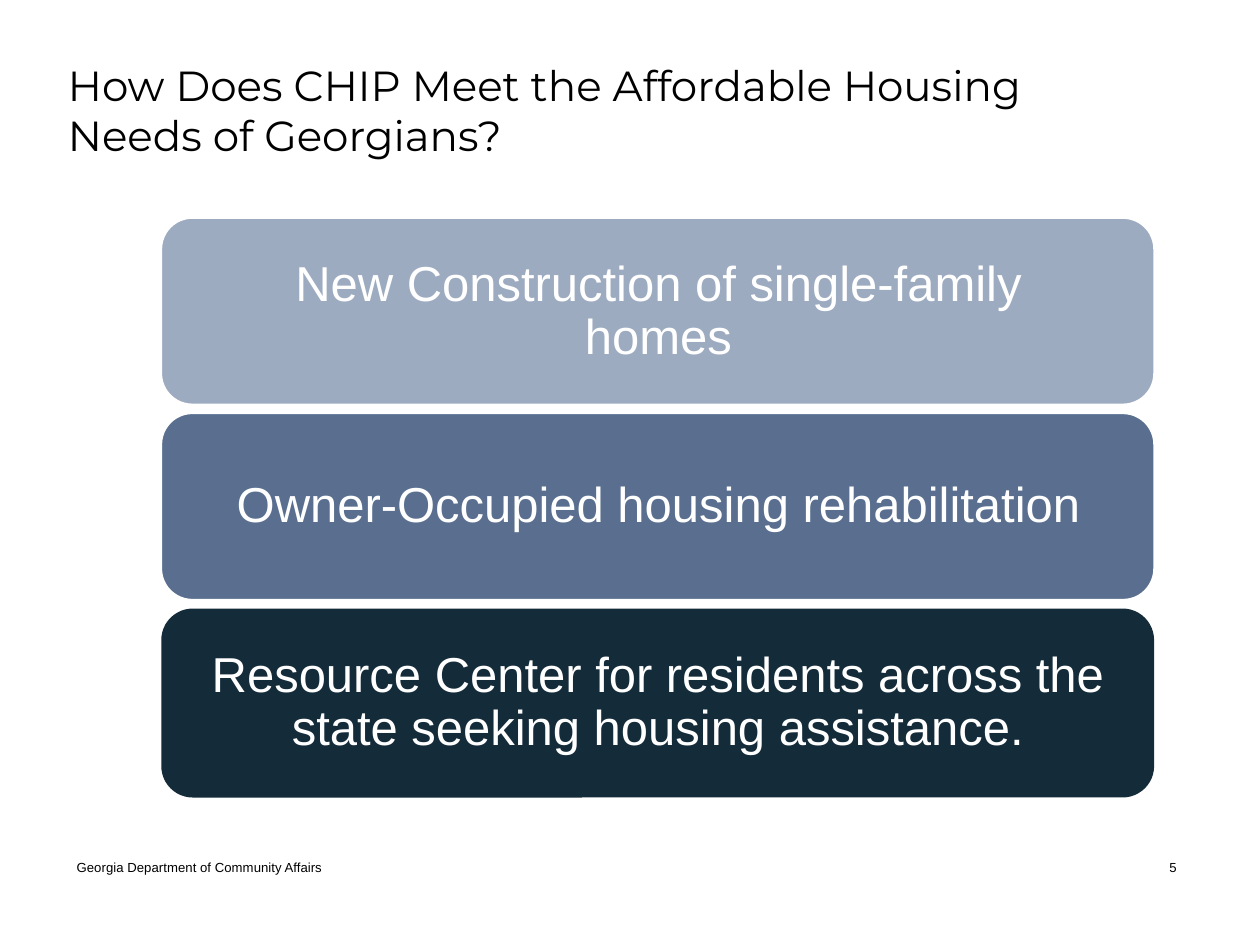
from dataclasses import dataclass

from pptx import Presentation
from pptx.dml.color import RGBColor
from pptx.enum.shapes import MSO_SHAPE
from pptx.enum.text import MSO_ANCHOR, PP_ALIGN
from pptx.util import Inches, Pt

ROUNDED = MSO_SHAPE.ROUNDED_RECTANGLE
MIDDLE, TOP = MSO_ANCHOR.MIDDLE, MSO_ANCHOR.TOP
LEFT, CENTER = PP_ALIGN.LEFT, PP_ALIGN.CENTER

COLORS = {
    "text": "000000",
    "white": "FFFFFF",
    "light": "9DABC1",
    "medium": "5A6F8F",
    "dark": "142B3A",
}

BAR_LEFT, BAR_TOP, BAR_WIDTH, BAR_STEP = 1.28, 1.73, 7.88, 1.55
LABEL_INSET_X, LABEL_INSET_Y = 0.11, 0.08
LABEL_WIDTH, LABEL_HEIGHT = 7.67, 1.33
LABEL_MARGIN = 0.27


@dataclass
class Caption:
    text: str
    left: float
    top: float
    width: float
    height: float
    size: float = 7.5
    font: str = "Arial"
    align: PP_ALIGN = LEFT
    anchor: MSO_ANCHOR = MIDDLE


@dataclass
class Bar:
    text: str
    color: str
    height: float = 1.48
    framed: bool = True


CAPTIONS = [
    Caption("Georgia Department of Community Affairs", 0.51, 6.68, 3.38, 0.4),
    Caption("5", 9.06, 6.51, 0.5, 0.74, align=CENTER),
    Caption("How Does CHIP Meet the Affordable Housing Needs of Georgians?",
            0.44, 0.42, 8.62, 0.91, size=24, font="Montserrat", anchor=TOP),
]

BARS = [
    Bar("New Construction of single-family homes", "light"),
    Bar("Owner-Occupied housing rehabilitation", "medium"),
    Bar("Resource Center for residents across the state seeking housing assistance.",
        "dark", height=1.5, framed=False),
]


def rgb(name: str) -> RGBColor:
    return RGBColor.from_string(COLORS[name])


def set_text(s, text: str, size: float, font: str, color: str,
             align: PP_ALIGN, anchor: MSO_ANCHOR):
    tf = s.text_frame
    tf.word_wrap = True
    tf.vertical_anchor = anchor
    p = tf.paragraphs[0]
    p.text = text
    p.alignment = align
    p.font.size = Pt(size)
    p.font.name = font
    p.font.color.rgb = rgb(color)
    return tf


def add_caption(slide, c: Caption) -> None:
    s = slide.shapes.add_textbox(Inches(c.left), Inches(c.top),
                                 Inches(c.width), Inches(c.height))
    set_text(s, c.text, c.size, c.font, "text", c.align, c.anchor)


def add_rounded(shapes, left: float, top: float, width: float, height: float,
                color: str):
    s = shapes.add_shape(ROUNDED, Inches(left), Inches(top),
                         Inches(width), Inches(height))
    s.shadow.inherit = False
    s.fill.solid()
    s.fill.fore_color.rgb = rgb(color)
    s.line.fill.background()
    return s


def add_bar(slide, bar: Bar, top: float) -> None:
    """Draw a bar; a framed one is a group of a white-edged frame and its label."""
    shapes = slide.shapes.add_group_shape().shapes if bar.framed else slide.shapes
    s = add_rounded(shapes, BAR_LEFT, top, BAR_WIDTH, bar.height, bar.color)
    if bar.framed:
        s.line.color.rgb = rgb("white")
        s.line.width = Pt(1)
        s = add_rounded(shapes, BAR_LEFT + LABEL_INSET_X, top + LABEL_INSET_Y,
                        LABEL_WIDTH, LABEL_HEIGHT, bar.color)
    tf = set_text(s, bar.text, 28, "Arial", "white", CENTER, MIDDLE)
    tf.margin_left = tf.margin_right = Inches(LABEL_MARGIN)
    tf.margin_top = tf.margin_bottom = Inches(LABEL_MARGIN)
    tf.paragraphs[0].line_spacing = 0.9


def main() -> None:
    prs = Presentation()
    prs.slide_width, prs.slide_height = Inches(10), Inches(7.5)
    slide = prs.slides.add_slide(prs.slide_layouts[6])
    for caption in CAPTIONS:
        add_caption(slide, caption)
    for i, bar in enumerate(BARS):
        add_bar(slide, bar, BAR_TOP + i * BAR_STEP)
    prs.save("out.pptx")


if __name__ == "__main__":
    main()
